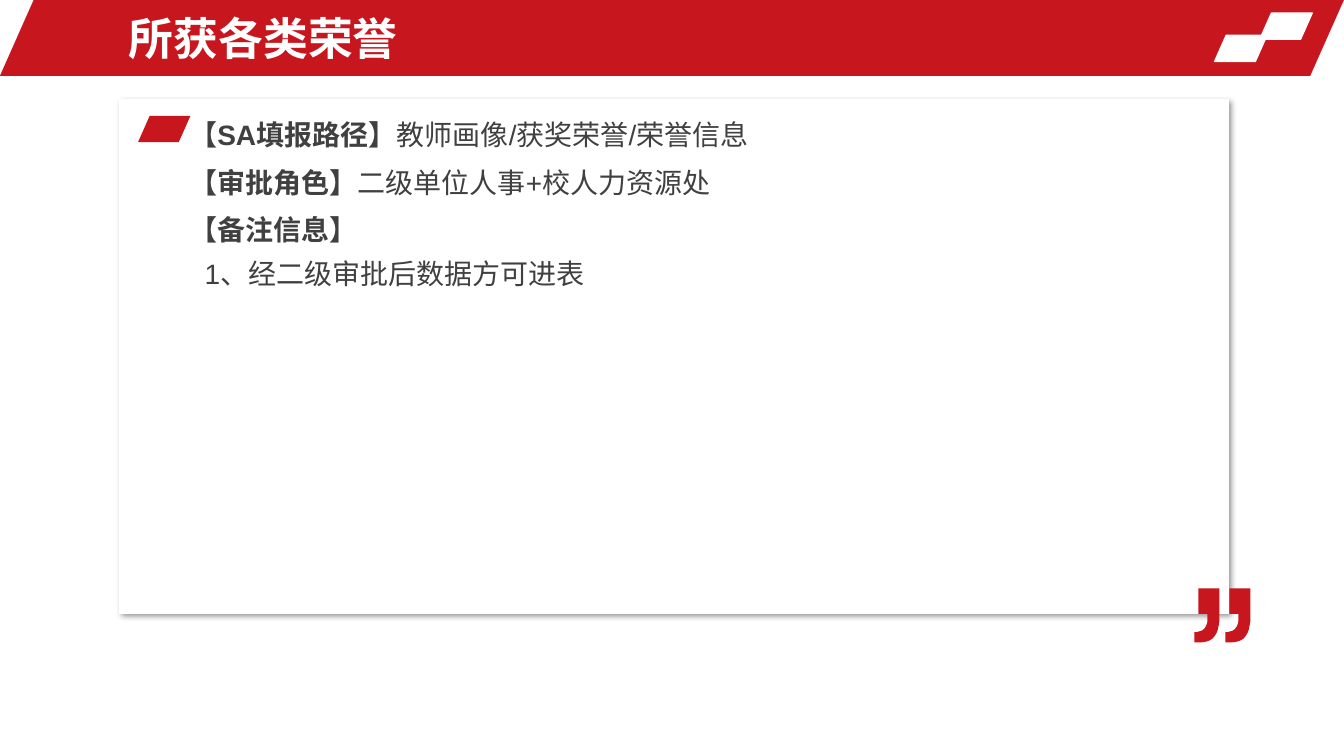
from dataclasses import dataclass
from typing import Optional

from lxml.etree import SubElement
from pptx import Presentation
from pptx.dml.color import RGBColor
from pptx.enum.lang import MSO_LANGUAGE_ID
from pptx.enum.shapes import MSO_SHAPE
from pptx.enum.text import MSO_ANCHOR, MSO_AUTO_SIZE
from pptx.oxml.ns import qn
from pptx.util import Cm, Pt


@dataclass(frozen=True)
class Theme:
    red: str = "C8161E"
    white: str = "FFFFFF"
    ink: str = "404040"
    shade: str = "000000"
    face: str = "Arial"
    head: int = 32
    body: int = 20


@dataclass(frozen=True)
class Panel:
    box: tuple
    kind: MSO_SHAPE
    turn: float
    fill: str
    edge: Optional[str] = None
    shade: bool = False


@dataclass(frozen=True)
class Line:
    label: str
    text: str = ""
    inset: float = 0


@dataclass(frozen=True)
class Block:
    box: tuple
    lines: tuple
    size: int
    color: str
    frame: dict
    space: float = 1


THEME = Theme()
SLANT = 0.444
BADGE = (1.32, 0.66)
NOTE = {"word_wrap": True, "auto_size": MSO_AUTO_SIZE.SHAPE_TO_FIT_TEXT}
TITLE = {"word_wrap": True, "vertical_anchor": MSO_ANCHOR.MIDDLE}

BAR = Panel((0, 0, 33.87, 1.91), MSO_SHAPE.PARALLELOGRAM, SLANT, THEME.red)
CARD = Panel((3, 2.49, 27.97, 12.98), MSO_SHAPE.ROUNDED_RECTANGLE, 0,
             THEME.white, shade=True)
BADGES = [Panel(spot + BADGE, MSO_SHAPE.PARALLELOGRAM, SLANT, THEME.white, THEME.white)
          for spot in ((31.75, 0.33), (30.61, 0.89))]
MARKER = Panel((3.48, 2.92) + BADGE, MSO_SHAPE.PARALLELOGRAM, SLANT, THEME.red)

HEADER = Block((3, 0.13, 19.66, 1.65), (Line("所获各类荣誉"),),
               THEME.head, THEME.white, TITLE)
NOTES = [Block((4.52, top, 24.16, tall), lines, THEME.body, THEME.ink, NOTE, 1.3)
         for top, tall, lines in (
             (2.59, 1.27, (Line("【SA填报路径】", "教师画像/获奖荣誉/荣誉信息"),)),
             (3.78, 1.37, (Line("【审批角色】", "二级单位人事+校人力资源处"),)),
             (4.98, 2.49, (Line("【备注信息】"),
                           Line("", "1、经二级审批后数据方可进表", 0.39))))]


def paint(shape, fill: str) -> None:
    shape.shadow.inherit = False
    shape.fill.solid()
    shape.fill.fore_color.rgb = RGBColor.from_string(fill)
    shape.line.fill.background()


def cast(shape) -> None:
    glow = SubElement(shape.element.spPr.find(qn("a:effectLst")), qn("a:outerShdw"),
                      blurRad=str(Pt(4)), dist=str(Pt(3)), dir="2700000",
                      algn="tl", rotWithShape="0")
    tone = SubElement(glow, qn("a:srgbClr"), val=THEME.shade)
    SubElement(tone, qn("a:alpha"), val="40000")


def draw(slide, panel: Panel) -> None:
    shape = slide.shapes.add_shape(panel.kind, *map(Cm, panel.box))
    shape.adjustments[0] = panel.turn
    paint(shape, panel.fill)
    if panel.edge:
        shape.line.color.rgb = RGBColor.from_string(panel.edge)
        shape.line.width = Pt(1)
    if panel.shade:
        cast(shape)


def write(slide, block: Block) -> None:
    frame = slide.shapes.add_textbox(*map(Cm, block.box)).text_frame
    for key, value in block.frame.items():
        setattr(frame, key, value)
    for place, line in enumerate(block.lines):
        para = frame.add_paragraph() if place else frame.paragraphs[0]
        para.line_spacing = block.space
        if line.inset:
            para._p.get_or_add_pPr().set("marL", str(Cm(line.inset)))
        for text, bold in ((line.label, True), (line.text, False)):
            if text:
                run = para.add_run()
                run.text = text
                look = {"name": THEME.face, "size": Pt(block.size), "bold": bold,
                        "language_id": MSO_LANGUAGE_ID.SIMPLIFIED_CHINESE}
                for key, value in look.items():
                    setattr(run.font, key, value)
                run.font.color.rgb = RGBColor.from_string(block.color)


def curve(a: tuple, b: tuple, c: tuple, d: tuple, steps: int = 10) -> list:
    points = []
    for step in range(1, steps + 1):
        t = step / steps
        parts = ((1 - t) ** 3, 3 * t * (1 - t) ** 2, 3 * t * t * (1 - t), t ** 3)
        points.append(tuple(sum(part * point[axis] for part, point in zip(parts, (a, b, c, d)))
                            for axis in (0, 1)))
    return points


def quote(slide) -> None:
    outline = [(63, 0), (63, 71),
               *curve((63, 71), (63, 114), (48, 136), (15, 136)),
               (0, 136), (0, 110),
               *curve((0, 110), (23, 110), (33, 97), (33, 76)),
               (33, 64), (10, 64), (10, 0)]
    first, *rest = outline
    pen = slide.shapes.build_freeform(*first, scale=Cm(0.01))
    pen.add_line_segments(rest, close=True)
    gap = 78
    pen.move_to(first[0] + gap, first[1])
    pen.add_line_segments([(x + gap, y) for x, y in rest], close=True)
    paint(pen.convert_to_shape(Cm(30.1), Cm(14.83)), THEME.red)


def main() -> None:
    deck = Presentation()
    deck.slide_width, deck.slide_height = Cm(33.87), Cm(19.05)
    slide = deck.slides.add_slide(deck.slide_layouts[6])
    for panel in (BAR, *BADGES):
        draw(slide, panel)
    write(slide, HEADER)
    draw(slide, CARD)
    quote(slide)
    draw(slide, MARKER)
    for block in NOTES:
        write(slide, block)
    deck.save("out.pptx")


if __name__ == "__main__":
    main()
